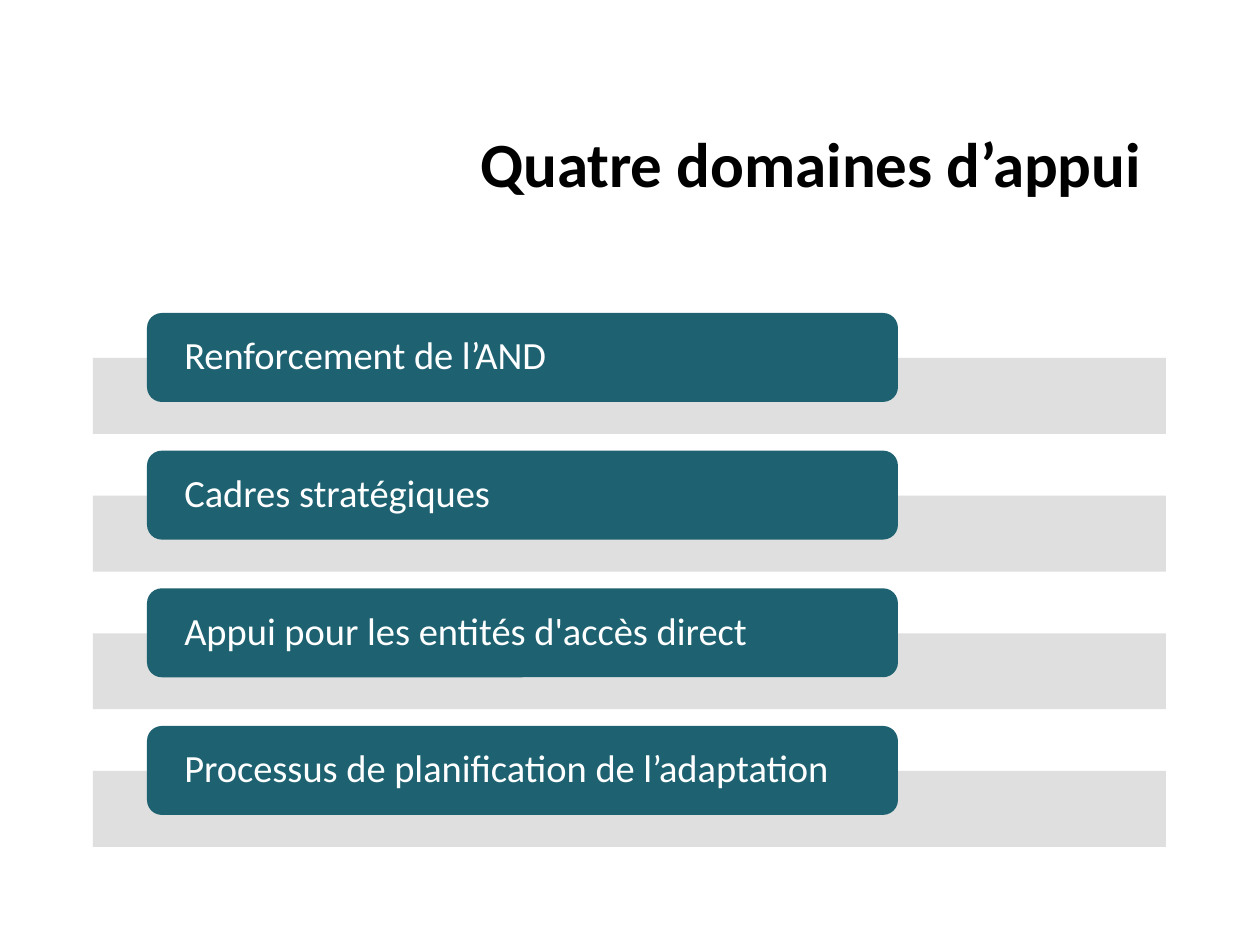
import pptx
import pptx.dml.color
import pptx.enum.shapes
import pptx.enum.text
import pptx.util

SHAPE = pptx.enum.shapes.MSO_SHAPE
ALIGN = pptx.enum.text.PP_ALIGN
MIDDLE = pptx.enum.text.MSO_ANCHOR.MIDDLE
TOPICS = [
    "Renforcement de l’AND",
    "Cadres stratégiques",
    "Appui pour les entités d'accès direct",
    "Processus de planification de l’adaptation",
]


def px(n):
    """Turn pixels into EMU."""
    return pptx.util.Emu(round(n * 914400 / 126))


def color(code):
    """Turn a hex string into a colour."""
    return pptx.dml.color.RGBColor.from_string(code)


def write(frame, text, size, code, align, bold=False):
    """Fill a text frame with one centred-height paragraph."""
    frame.word_wrap = True
    frame.vertical_anchor = MIDDLE
    line = frame.paragraphs[0]
    line.text = text
    line.alignment = align
    font = line.font
    font.name = "Calibri"
    font.size = pptx.util.Pt(size)
    font.bold = bold
    font.color.rgb = color(code)
    return line


def block(slide, kind, box, code):
    """Add a plain filled shape."""
    shape = slide.shapes.add_shape(kind, *map(px, box))
    shape.shadow.inherit = False
    shape.fill.solid()
    shape.fill.fore_color.rgb = color(code)
    shape.line.fill.background()
    return shape


def title(slide, box, text):
    """Add the right-aligned heading."""
    frame = slide.shapes.add_textbox(*map(px, box)).text_frame
    write(frame, text, 36, "000000", ALIGN.RIGHT, True)


def row(slide, box, text):
    """Add a grey band with a rounded label over its upper edge."""
    left, top, width, height = box
    block(slide, SHAPE.RECTANGLE, (left, top + 45, width, height - 45), "DFDFDF")
    label = block(slide, SHAPE.ROUNDED_RECTANGLE,
                  (left + 54, top, width * 7 // 10, 89), "1E6271")
    frame = label.text_frame
    frame.margin_left = frame.margin_right = px(33)
    frame.margin_top = frame.margin_bottom = 0
    line = write(frame, text, 22, "FFFFFF", ALIGN.LEFT)
    line.line_spacing = 0.9


def topics(slide, box, names):
    """Stack one row per topic at an equal pitch."""
    left, top, width, height = box
    tall = 121
    pitch = (height - tall) / (len(names) - 1)
    for i, name in enumerate(names):
        row(slide, (left, top + i * pitch, width, tall), name)


def main():
    """Build and save the slide."""
    deck = pptx.Presentation()
    deck.slide_width = px(1260)
    deck.slide_height = px(945)
    slide = deck.slides.add_slide(deck.slide_layouts[6])
    title(slide, (116, 116, 1038, 93), "Quatre domaines d’appui")
    topics(slide, (93, 313, 1073, 534), TOPICS)
    deck.save("out.pptx")


if __name__ == "__main__":
    main()
